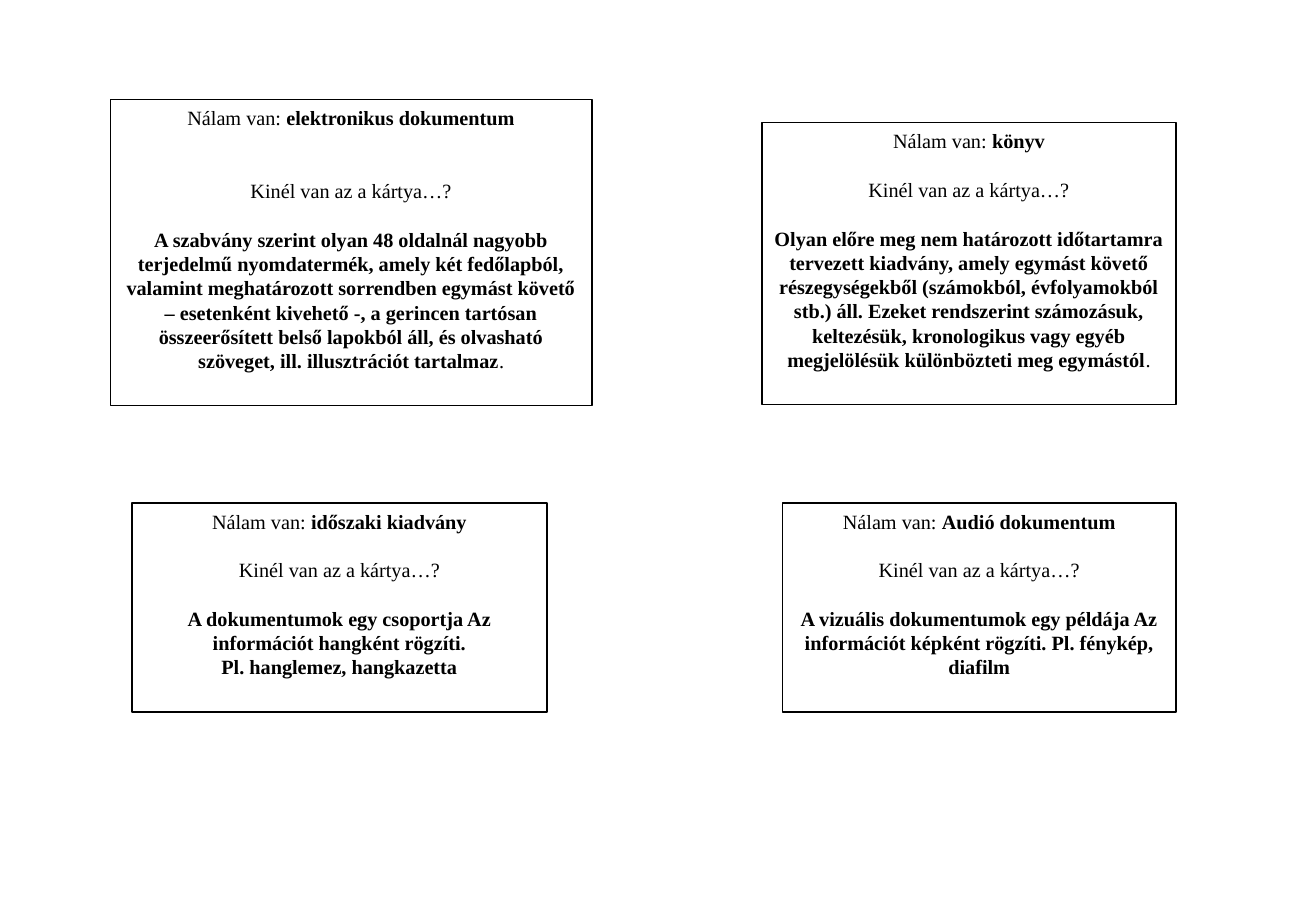
"""Builds a slide of four cards for a "who has the card" library game."""
import dataclasses

import pptx
import pptx.dml.color
import pptx.enum.shapes
import pptx.enum.text
import pptx.util


@dataclasses.dataclass(frozen=True)
class Theme:
    font: str = "Times New Roman"
    ink: str = "000000"
    size: float = 12
    line_height: float = 14.4
    border: float = 1


THEME = Theme()
PAGE_WIDTH = pptx.util.Inches(10.83)
PAGE_HEIGHT = pptx.util.Inches(7.5)
OWNER = "Nálam van: "
QUESTION = "Kinél van az a kártya…?"
RIGHT_EDGE = 89.38
LOWER_ROW = 55.2
LOWER_HEIGHT = 22.93
CARD_WIDTH = 31.49

CARDS = [
    dict(
        left=8.4, top=10.93, width=36.57, height=33.6, gap=2,
        holder="elektronikus dokumentum",
        clue=["A szabvány szerint olyan 48 oldalnál nagyobb terjedelmű nyomdatermék, "
              "amely két fedőlapból, valamint meghatározott sorrendben egymást követő "
              "– esetenként kivehető -, a gerincen tartósan összeerősített belső "
              "lapokból áll, és olvasható szöveget, ill. illusztrációt tartalmaz"],
        ending=".",
    ),
    dict(
        left=RIGHT_EDGE - CARD_WIDTH, top=13.47, width=CARD_WIDTH, height=30.93,
        holder="könyv",
        clue=["Olyan előre meg nem határozott időtartamra tervezett kiadvány, amely "
              "egymást követő részegységekből (számokból, évfolyamokból stb.) áll. "
              "Ezeket rendszerint számozásuk, keltezésük, kronologikus vagy egyéb "
              "megjelölésük különbözteti meg egymástól"],
        ending=".",
    ),
    dict(
        left=10.06, top=LOWER_ROW, width=CARD_WIDTH, height=LOWER_HEIGHT,
        holder="időszaki kiadvány",
        clue=["A dokumentumok egy csoportja Az információt hangként rögzíti.",
              "Pl. hanglemez, hangkazetta"],
    ),
    dict(
        left=RIGHT_EDGE - 29.92, top=LOWER_ROW, width=29.92, height=LOWER_HEIGHT,
        holder="Audió dokumentum",
        clue=["A vizuális dokumentumok egy példája Az információt képként rögzíti. "
              "Pl. fénykép, diafilm"],
    ),
]


def colour(value):
    """Return the colour object for a hex value."""
    return pptx.dml.color.RGBColor.from_string(value)


def across(percent):
    """Turn a percentage of the page width into a length."""
    return round(PAGE_WIDTH * percent / 100)


def down(percent):
    """Turn a percentage of the page height into a length."""
    return round(PAGE_HEIGHT * percent / 100)


def add_span(para, text, bold=False):
    """Add one formatted run of text to a paragraph."""
    span = para.add_run()
    span.text = text
    span.font.name = THEME.font
    span.font.size = pptx.util.Pt(THEME.size)
    span.font.bold = bold
    span.font.color.rgb = colour(THEME.ink)


def format_para(para, gap=0):
    """Centre a paragraph and leave a gap of whole lines above it."""
    para.alignment = pptx.enum.text.PP_ALIGN.CENTER
    para.line_spacing = pptx.util.Pt(THEME.line_height)
    para.space_before = pptx.util.Pt(THEME.line_height * gap)


def add_box(page, left, top, width, height):
    """Add an outlined rectangle placed by page percentages."""
    box = page.shapes.add_shape(
        pptx.enum.shapes.MSO_SHAPE.RECTANGLE,
        across(left), down(top), across(width), down(height))
    box.shadow.inherit = False
    box.fill.background()
    box.line.color.rgb = colour(THEME.ink)
    box.line.width = pptx.util.Pt(THEME.border)
    box.text_frame.word_wrap = True
    box.text_frame.vertical_anchor = pptx.enum.text.MSO_ANCHOR.TOP
    return box


def add_card(page, holder, clue, ending="", gap=1, **place):
    """Add a card with its holder, the question and the clue."""
    frame = add_box(page, **place).text_frame
    para = frame.paragraphs[0]
    format_para(para)
    add_span(para, OWNER)
    add_span(para, holder, bold=True)
    para = frame.add_paragraph()
    format_para(para, gap=gap)
    add_span(para, QUESTION)
    for index, text in enumerate(clue):
        para = frame.add_paragraph()
        format_para(para, gap=0 if index else 1)
        add_span(para, text, bold=True)
    if ending:
        add_span(para, ending)


def main():
    """Build the deck and save it."""
    deck = pptx.Presentation()
    deck.slide_width = PAGE_WIDTH
    deck.slide_height = PAGE_HEIGHT
    page = deck.slides.add_slide(deck.slide_layouts[6])
    for card in CARDS:
        add_card(page, **card)
    deck.save("out.pptx")


if __name__ == "__main__":
    main()
